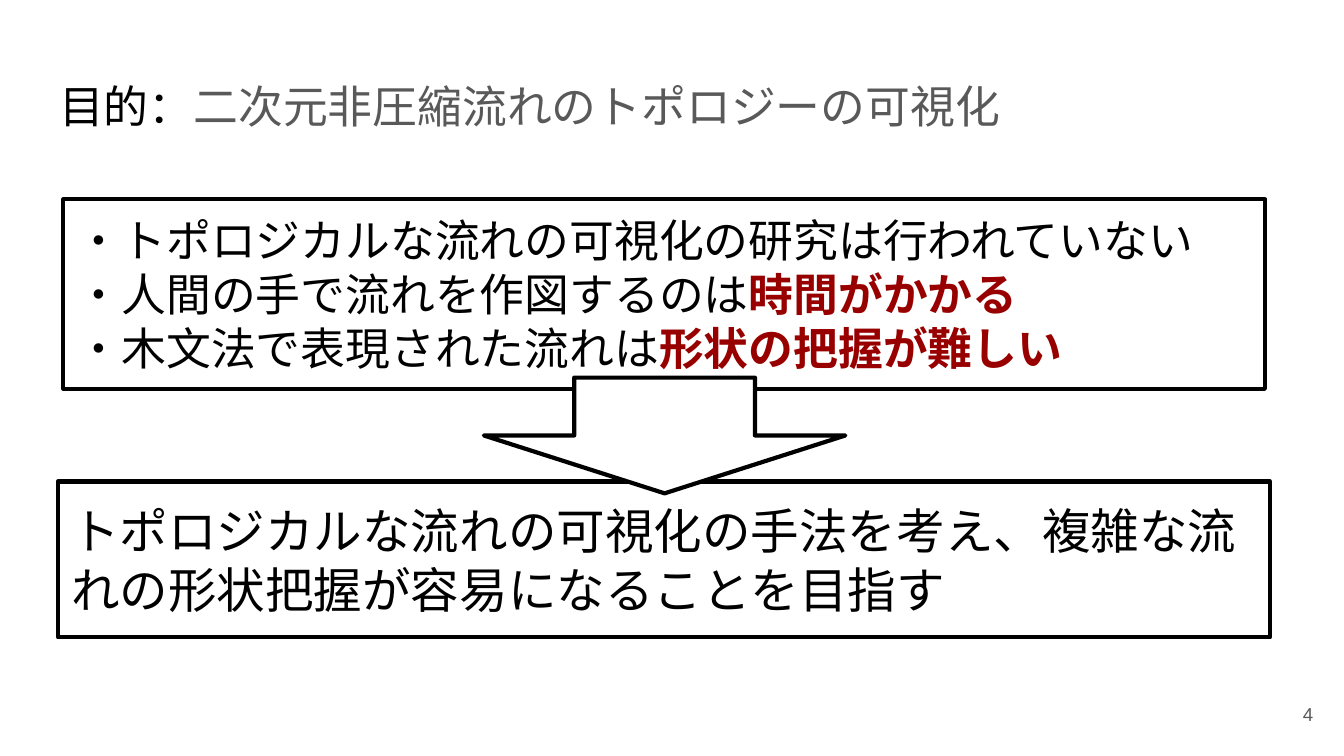
from dataclasses import dataclass

from pptx import Presentation
from pptx.dml.color import RGBColor
from pptx.enum import shapes, text
from pptx.util import Pt


@dataclass(frozen=True)
class Theme:
    font: str = "Arial"
    ink: str = "000000"
    grey: str = "595959"
    accent: str = "980000"
    paper: str = "FFFFFF"
    heading_size: float = 24
    goal_size: float = 26
    number_size: float = 10
    outline: float = 2.25
    inset: float = 7.2


THEME = Theme()


def place(shape, box):
    for name, value in zip(("left", "top", "width", "height"), box):
        setattr(shape, name, Pt(value))


def write(shape, paragraphs, size, anchor=text.MSO_ANCHOR.TOP, align=text.PP_ALIGN.LEFT):
    frame = shape.text_frame
    frame_format = {
        "word_wrap": True,
        "auto_size": text.MSO_AUTO_SIZE.NONE,
        "vertical_anchor": anchor,
    }
    for side in ("left", "top", "right", "bottom"):
        frame_format[f"margin_{side}"] = Pt(THEME.inset)
    for name, value in frame_format.items():
        setattr(frame, name, value)
    for index, spans in enumerate(paragraphs):
        para = frame.add_paragraph() if index else frame.paragraphs[0]
        para.alignment = align
        for words, color, bold in spans:
            span = para.add_run()
            span.text = words
            for name, value in {"name": THEME.font, "size": Pt(size), "bold": bold}.items():
                setattr(span.font, name, value)
            span.font.color.rgb = RGBColor.from_string(color)


def add_outlined(page, kind, box, filled=True):
    shape = page.shapes.add_shape(kind, *map(Pt, box))
    shape.shadow.inherit = False
    if filled:
        shape.fill.solid()
        shape.fill.fore_color.rgb = RGBColor.from_string(THEME.paper)
    else:
        shape.fill.background()
    shape.line.color.rgb = RGBColor.from_string(THEME.ink)
    shape.line.width = Pt(THEME.outline)
    return shape


def add_heading(page, box):
    title = page.shapes.title
    place(title, box)
    spans = [
        ("目的：", THEME.ink, False),
        ("二次元非圧縮流れのトポロジーの可視化", THEME.grey, False),
    ]
    write(title, [spans], THEME.heading_size)


def add_problems(page, box):
    problems = [
        ("・トポロジカルな流れの可視化の研究は行われていない", ""),
        ("・人間の手で流れを作図するのは", "時間がかかる"),
        ("・木文法で表現された流れは", "形状の把握が難しい"),
    ]
    paragraphs = [
        [(words, color, bold)
         for words, color, bold in ((plain, THEME.ink, False), (strong, THEME.accent, True))
         if words]
        for plain, strong in problems
    ]
    panel = add_outlined(page, shapes.MSO_SHAPE.RECTANGLE, box, filled=False)
    write(panel, paragraphs, THEME.heading_size)


def add_goal(page, box):
    goal = "トポロジカルな流れの可視化の手法を考え、複雑な流れの形状把握が容易になることを目指す"
    panel = add_outlined(page, shapes.MSO_SHAPE.RECTANGLE, box)
    write(panel, [[(goal, THEME.ink, False)]], THEME.goal_size, text.MSO_ANCHOR.MIDDLE)


def add_page_number(page, box):
    number = page.shapes.add_textbox(*map(Pt, box))
    write(number, [[("4", THEME.grey, False)]], THEME.number_size,
          text.MSO_ANCHOR.MIDDLE, text.PP_ALIGN.RIGHT)


def build_purpose_page(deck):
    page = deck.slides.add_slide(deck.slide_layouts[5])
    add_heading(page, (24.5, 35, 671, 45.4))
    add_page_number(page, (667.4, 367.2, 43.2, 31))
    add_problems(page, (34, 106.8, 643.7, 101.5))
    add_goal(page, (31, 258, 649.4, 83.5))
    add_outlined(page, shapes.MSO_SHAPE.DOWN_ARROW, (259.2, 202.3, 193.7, 62))


def main():
    deck = Presentation()
    deck.slide_width, deck.slide_height = Pt(720), Pt(405)
    build_purpose_page(deck)
    deck.save("out.pptx")


if __name__ == "__main__":
    main()
